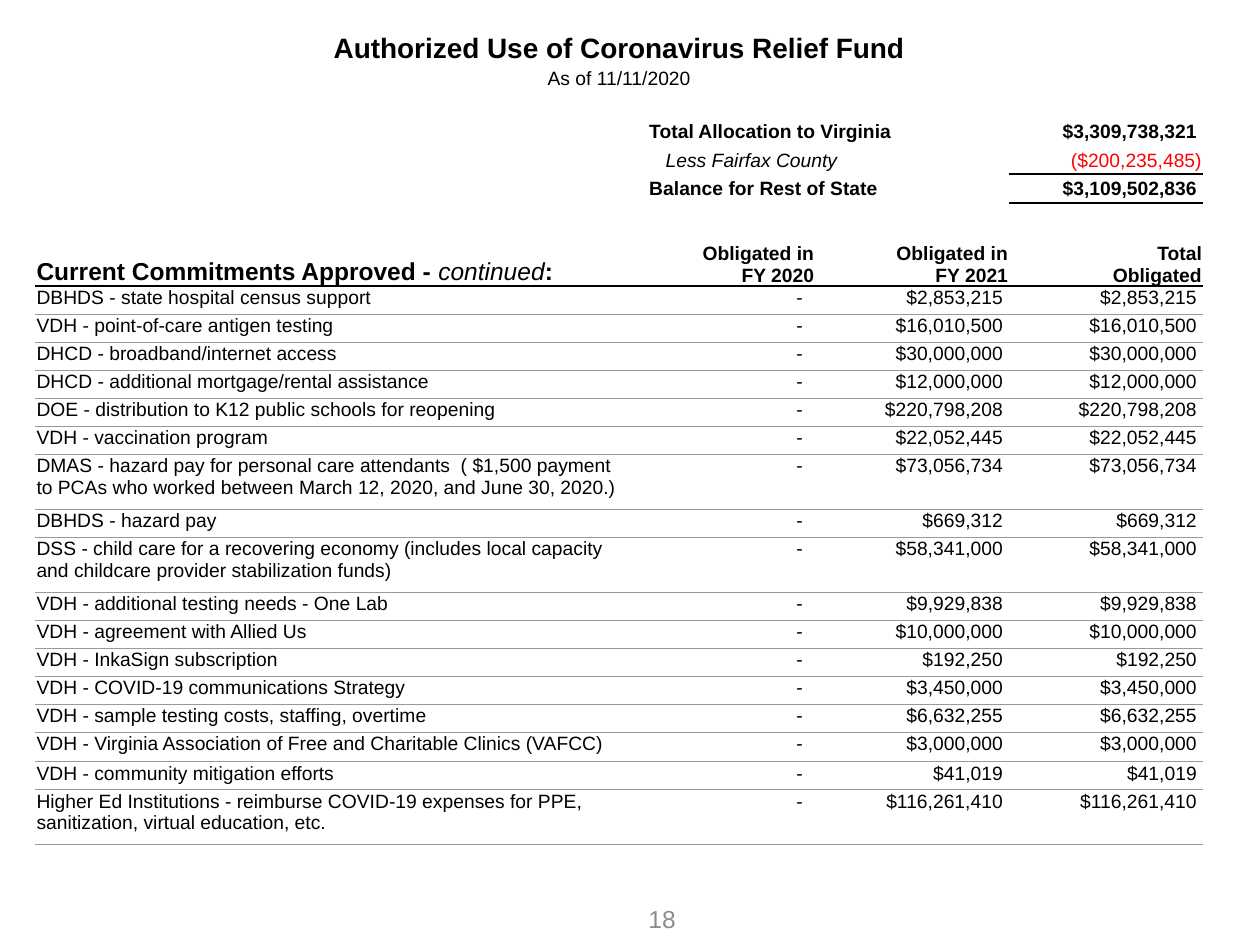
import pptx
import pptx.util
import pptx.dml.color
import pptx.enum.text
import pptx.oxml.ns
import lxml.etree

Pt, Inches = pptx.util.Pt, pptx.util.Inches
Color = pptx.dml.color.RGBColor
Align = pptx.enum.text.PP_ALIGN
Anchor = pptx.enum.text.MSO_ANCHOR
qn = pptx.oxml.ns.qn

BLACK = Color(0, 0, 0)
RED = Color(0xFF, 0, 0)
GRAY = Color(0x99, 0x99, 0x99)
PALE = Color(0x8C, 0x8C, 0x8C)
FONT = "Arial"
PLAIN = "{2D5ABB26-0587-4C30-8999-92F81FD0307C}"  # style without fill or grid

WIDE, HIGH = Inches(10), Inches(7.5)
SHARES = (0.502, 0.166, 0.166, 0.166)
TOP = (20, 14.5, 16, 16, 16.5, 16.5, 16, 31.5)  # row heights in points
ROW, ROOMY, TALL = 16, 17, 31.5
PAD = 0.01

SUMS = (
    ("Total Allocation to Virginia", "$3,309,738,321", 0.22, 0.05, dict(bold=True), {}),
    ("Less Fairfax County", "($200,235,485)", 0.35, PAD, dict(ital=True), dict(tint=RED)),
    ("Balance for Rest of State", "$3,109,502,836", 0.22, 0.05, dict(bold=True), {}),
)
HEADS = (("Obligated in", "FY 2020"), ("Obligated in", "FY 2021"), ("Total", "Obligated"))
ITEMS = (
    ("DBHDS - state hospital census support", "$2,853,215", ROW),
    ("VDH - point-of-care antigen testing", "$16,010,500", ROW),
    ("DHCD - broadband/internet access", "$30,000,000", ROW),
    ("DHCD - additional mortgage/rental assistance", "$12,000,000", ROW),
    ("DOE - distribution to K12 public schools for reopening", "$220,798,208", ROW),
    ("VDH - vaccination program", "$22,052,445", ROW),
    ("DMAS - hazard pay for personal care attendants  ( $1,500 payment to PCAs "
     "who worked between March 12, 2020, and June 30, 2020.)", "$73,056,734", TALL),
    ("DBHDS - hazard pay", "$669,312", ROW),
    ("DSS - child care for a recovering economy (includes local capacity and "
     "childcare provider stabilization funds)", "$58,341,000", TALL),
    ("VDH - additional testing needs - One Lab", "$9,929,838", ROW),
    ("VDH - agreement with Allied Us", "$10,000,000", ROW),
    ("VDH - InkaSign subscription", "$192,250", ROW),
    ("VDH - COVID-19 communications Strategy", "$3,450,000", ROW),
    ("VDH - sample testing costs, staffing, overtime", "$6,632,255", ROW),
    ("VDH - Virginia Association of Free and Charitable Clinics (VAFCC)", "$3,000,000", ROOMY),
    ("VDH - community mitigation efforts", "$41,019", ROW),
    ("Higher Ed Institutions - reimburse COVID-19 expenses for PPE, sanitization, "
     "virtual education, etc.", "$116,261,410", TALL),
)


def say(par, text, size=11, bold=False, ital=False, tint=BLACK, align=Align.LEFT):
    par.alignment = align
    run = par.add_run()
    run.text = text
    font = run.font
    font.name, font.size, font.bold, font.italic = FONT, Pt(size), bold, ital
    font.color.rgb = tint


def put(cell, *lines, anchor=Anchor.TOP, left=PAD, right=PAD, **look):
    cell.vertical_anchor = anchor
    cell.margin_left, cell.margin_right = Inches(left), Inches(right)
    frame = cell.text_frame
    for i, line in enumerate(lines):
        say(frame.add_paragraph() if i else frame.paragraphs[0], line, **look)


def rule(cell, side, tint, width):
    """Draw the cell's top ("T") or bottom ("B") border."""
    line = lxml.etree.SubElement(cell._tc.get_or_add_tcPr(), qn("a:ln" + side), w=str(Pt(width)))
    fill = lxml.etree.SubElement(line, qn("a:solidFill"))
    lxml.etree.SubElement(fill, qn("a:srgbClr"), val=str(tint))


def clear(cell):
    """Set tight margins, no fill, and a small height for empty text."""
    cell.margin_left = cell.margin_right = cell.margin_top = Inches(PAD)
    cell.margin_bottom = 0
    cell.fill.background()
    par = cell.text_frame.paragraphs[0]
    lxml.etree.SubElement(par._p, qn("a:endParaRPr"), sz="1100")


def title(grid):
    for row, text, size, bold in (
        (0, "Authorized Use of Coronavirus Relief Fund", 16, True),
        (1, "As of 11/11/2020", 11, False),
    ):
        grid.cell(row, 0).merge(grid.cell(row, 3))
        put(grid.cell(row, 0), text, size=size, bold=bold, align=Align.CENTER, anchor=Anchor.BOTTOM)


def sums(grid, first):
    for row, (name, value, left, right, look, tone) in enumerate(SUMS, first):
        grid.cell(row, 1).merge(grid.cell(row, 2))
        put(grid.cell(row, 1), name, left=left, anchor=Anchor.MIDDLE, **look)
        put(grid.cell(row, 3), value, right=right, anchor=Anchor.MIDDLE,
            align=Align.RIGHT, bold=not tone, **tone)
    rule(grid.cell(first + 1, 3), "B", BLACK, 1)
    rule(grid.cell(first + 2, 3), "T", BLACK, 1)


def heads(grid, row):
    name = grid.cell(row, 0)
    put(name, "Current Commitments Approved - ", size=14, bold=True, anchor=Anchor.BOTTOM)
    par = name.text_frame.paragraphs[0]
    say(par, "continued", size=14, ital=True)
    say(par, ":", size=14, bold=True)
    for col, lines in enumerate(HEADS, 1):
        put(grid.cell(row, col), *lines, bold=True, align=Align.RIGHT, anchor=Anchor.BOTTOM)
    for col in range(4):
        rule(grid.cell(row, col), "B", BLACK, 1)


def items(grid, first):
    for row, (name, value, _) in enumerate(ITEMS, first):
        put(grid.cell(row, 0), name)
        for col, (text, right) in enumerate((("-", 0.1), (value, 0.05), (value, 0.05)), 1):
            put(grid.cell(row, col), text, right=right, align=Align.RIGHT)
        for col in range(4):
            cell = grid.cell(row, col)
            rule(cell, "T", *((BLACK, 1) if row == first else (GRAY, 0.5)))
            rule(cell, "B", GRAY, 0.5)


def ledger(slide, x, y, w):
    tall = TOP + tuple(item[2] for item in ITEMS)
    shape = slide.shapes.add_table(len(tall), len(SHARES), x, y, w, Pt(sum(tall)))
    grid = shape.table
    grid.first_row = grid.horz_banding = False
    grid._tbl.tblPr.find(qn("a:tableStyleId")).text = PLAIN
    for col, share in zip(grid.columns, SHARES):
        col.width = int(w * share)
    for row, size in zip(grid.rows, tall):
        row.height = Pt(size)
    for cell in grid.iter_cells():
        clear(cell)
        # Borders must come before the fill, so the fill is set again below.
        cell._tc.tcPr.remove(cell._tc.tcPr.find(qn("a:noFill")))
    title(grid)
    sums(grid, 3)
    heads(grid, 7)
    items(grid, 8)
    for cell in grid.iter_cells():
        cell.fill.background()


def folio(slide, x, y, w, h):
    frame = slide.shapes.add_textbox(x, y, w, h).text_frame
    frame.word_wrap = True
    frame.vertical_anchor = Anchor.MIDDLE
    frame.margin_left = frame.margin_right = frame.margin_top = frame.margin_bottom = 0
    say(frame.paragraphs[0], "18", size=14, tint=PALE, align=Align.CENTER)


def main():
    deck = pptx.Presentation()
    deck.slide_width, deck.slide_height = WIDE, HIGH
    slide = deck.slides.add_slide(deck.slide_layouts[6])
    folio(slide, Inches(5.01), Inches(7.15), Inches(0.49), Inches(0.28))
    ledger(slide, Inches(0.28), Inches(0.23), Inches(9.27))
    deck.save("out.pptx")


if __name__ == "__main__":
    main()
